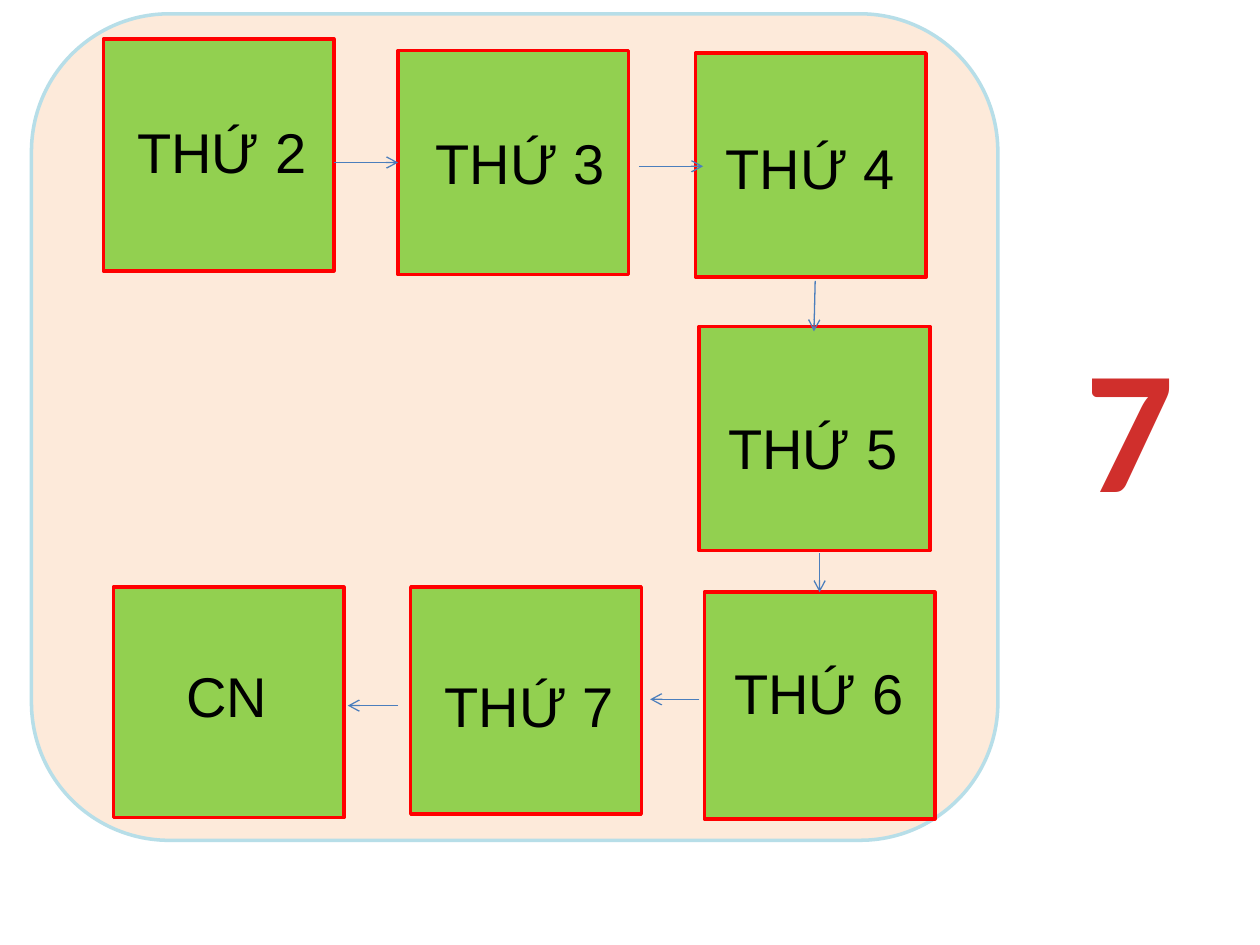
from dataclasses import dataclass
from typing import Optional

from lxml.etree import SubElement
from pptx import Presentation
from pptx.dml.color import RGBColor
from pptx.enum.shapes import MSO_CONNECTOR, MSO_SHAPE
from pptx.enum.text import MSO_AUTO_SIZE, PP_ALIGN
from pptx.oxml.ns import qn
from pptx.util import Pt

COLORS = {
    "panel": "FDEADA",
    "panel_line": "B7DEE8",
    "day": "92D050",
    "day_line": "FF0000",
    "arrow": "4B7EBC",
    "text": "000000",
}
COUNT_GRADIENT = [(0, "FC7C7A"), (75, "D02F2C"), (100, "C70500")]
DAY_WIDTH = 131.76
LABEL_HEIGHT = 46.08
TOP, LEFT = 0, 1


@dataclass
class Day:
    name: str
    left: float
    top: float
    height: float
    label_left: float
    label_top: float
    label_width: float = 112.32


@dataclass
class Arrow:
    start: tuple[float, float]
    end: tuple[float, float]
    target: Optional[str] = None
    side: int = TOP


DAYS = [
    Day("THỨ 2", 59.04, 22.32, 132.48, 71.28, 63.36),
    Day("THỨ 3", 227.52, 28.8, 128.16, 241.92, 69.84),
    Day("THỨ 4", 397.44, 30.24, 128.16, 407.52, 72.72),
    Day("THỨ 5", 399.6, 186.48, 128.16, 408.96, 232.56),
    Day("THỨ 6", 402.48, 338.4, 129.6, 412.56, 372.96),
    Day("THỨ 7", 234.72, 335.52, 129.6, 246.96, 380.16),
    Day("CN", 64.8, 335.52, 131.76, 99.36, 374.4, 61.2),
]
ARROWS = [
    Arrow((190.8, 92.88), (227.52, 92.88), "THỨ 3", LEFT),
    Arrow((365.04, 95.04), (401.76, 95.04)),
    Arrow((465.84, 160.56), (465.12, 189.36)),
    Arrow((468.36, 316.08), (468.36, 338.4), "THỨ 6", TOP),
    Arrow((399.6, 399.6), (371.52, 399.6)),
    Arrow((227.52, 403.2), (198.72, 403.2)),
]


def color(name: str) -> RGBColor:
    return RGBColor.from_string(COLORS[name])


def add_box(shapes, kind, left: float, top: float, width: float, height: float,
            fill: str, line: str):
    shape = shapes.add_shape(kind, Pt(left), Pt(top), Pt(width), Pt(height))
    shape.shadow.inherit = False
    shape.fill.solid()
    shape.fill.fore_color.rgb = color(fill)
    shape.line.color.rgb = color(line)
    shape.line.width = Pt(2)
    return shape


def add_text(shapes, text: str, left: float, top: float, width: float, height: float,
             size: float, font_name: str, wrap: bool = False):
    box = shapes.add_textbox(Pt(left), Pt(top), Pt(width), Pt(height))
    box.text_frame.word_wrap = wrap
    box.text_frame.auto_size = MSO_AUTO_SIZE.SHAPE_TO_FIT_TEXT
    paragraph = box.text_frame.paragraphs[0]
    paragraph.add_run().text = text
    paragraph.font.size = Pt(size)
    paragraph.font.name = font_name
    return paragraph


def add_day(slide, day: Day):
    """Group a day's square with its label and return the square."""
    shapes = slide.shapes.add_group_shape().shapes
    square = add_box(shapes, MSO_SHAPE.FLOWCHART_PROCESS, day.left, day.top,
                     DAY_WIDTH, day.height, "day", "day_line")
    paragraph = add_text(shapes, day.name, day.label_left, day.label_top,
                         day.label_width, LABEL_HEIGHT, 32, "Arial")
    paragraph.font.color.rgb = color("text")
    return square


def add_arrow(slide, arrow: Arrow, squares: dict) -> None:
    connector = slide.shapes.add_connector(
        MSO_CONNECTOR.STRAIGHT, *(Pt(value) for value in arrow.start + arrow.end))
    if arrow.target:
        connector.end_connect(squares[arrow.target], arrow.side)
    connector.line.color.rgb = color("arrow")
    connector.line.width = Pt(0.75)
    properties = connector._element.spPr
    SubElement(properties.find(qn("a:ln")), qn("a:tailEnd"), type="arrow")
    SubElement(properties, qn("a:effectLst"))


def add_day_count(slide) -> None:
    paragraph = add_text(slide.shapes, "7", 591.84, 177.84, 108, 128.16,
                         100, "Calibri", wrap=True)
    paragraph.alignment = PP_ALIGN.CENTER
    paragraph.font.bold = True
    run_properties = paragraph.runs[0]._r.get_or_add_rPr()
    gradient = SubElement(run_properties, qn("a:gradFill"))
    stops = SubElement(gradient, qn("a:gsLst"))
    for percent, hex_color in COUNT_GRADIENT:
        stop = SubElement(stops, qn("a:gs"), pos=str(percent * 1000))
        SubElement(stop, qn("a:srgbClr"), val=hex_color)
    SubElement(gradient, qn("a:lin"), ang="5400000", scaled="0")


def main() -> None:
    presentation = Presentation()
    presentation.slide_width, presentation.slide_height = Pt(720), Pt(540)
    slide = presentation.slides.add_slide(presentation.slide_layouts[6])
    add_box(slide.shapes, MSO_SHAPE.ROUNDED_RECTANGLE, 18, 7.92, 552.24, 472.32,
            "panel", "panel_line")
    squares = {day.name: add_day(slide, day) for day in DAYS}
    for arrow in ARROWS:
        add_arrow(slide, arrow, squares)
    add_day_count(slide)
    presentation.save("out.pptx")


if __name__ == "__main__":
    main()
